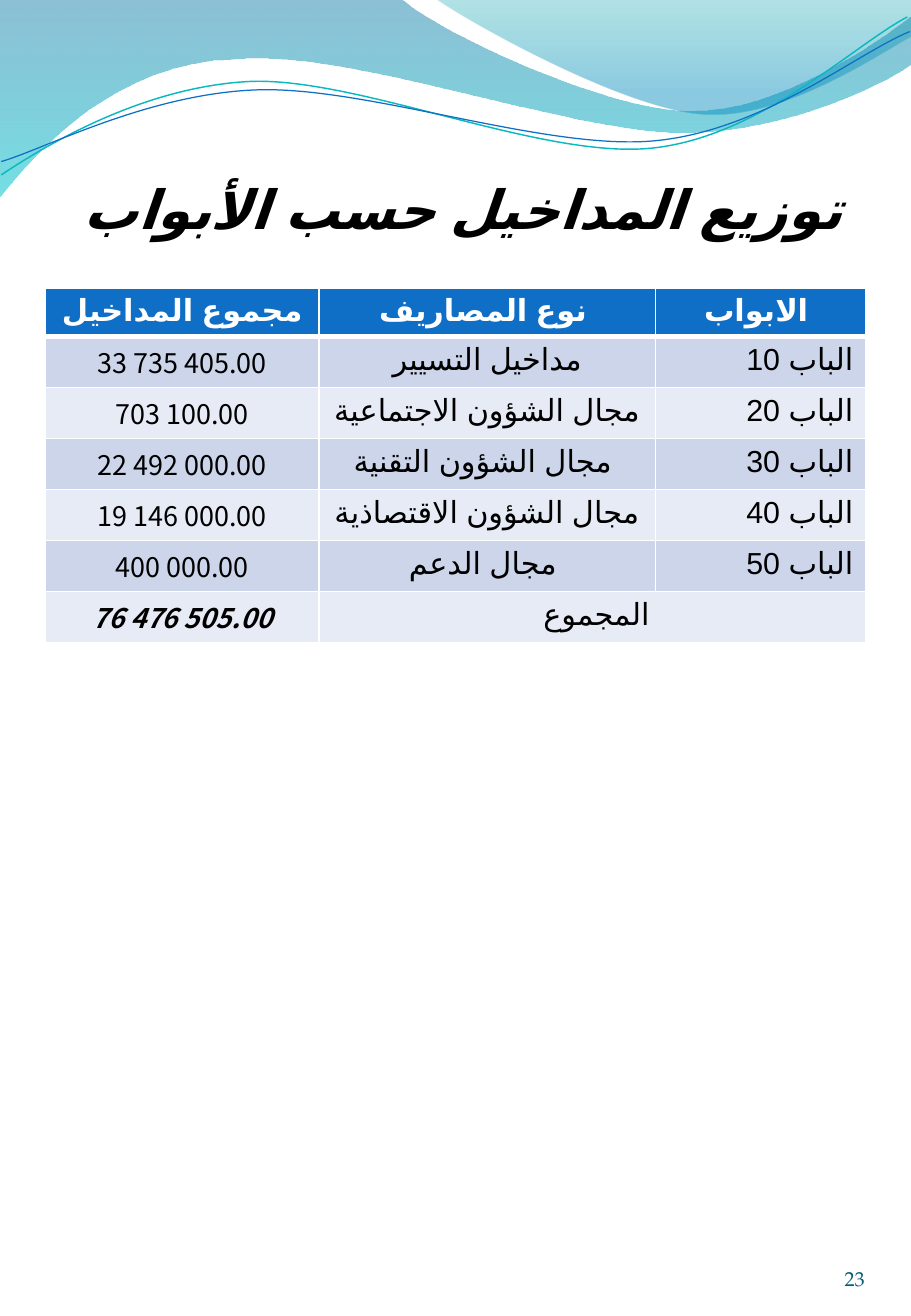
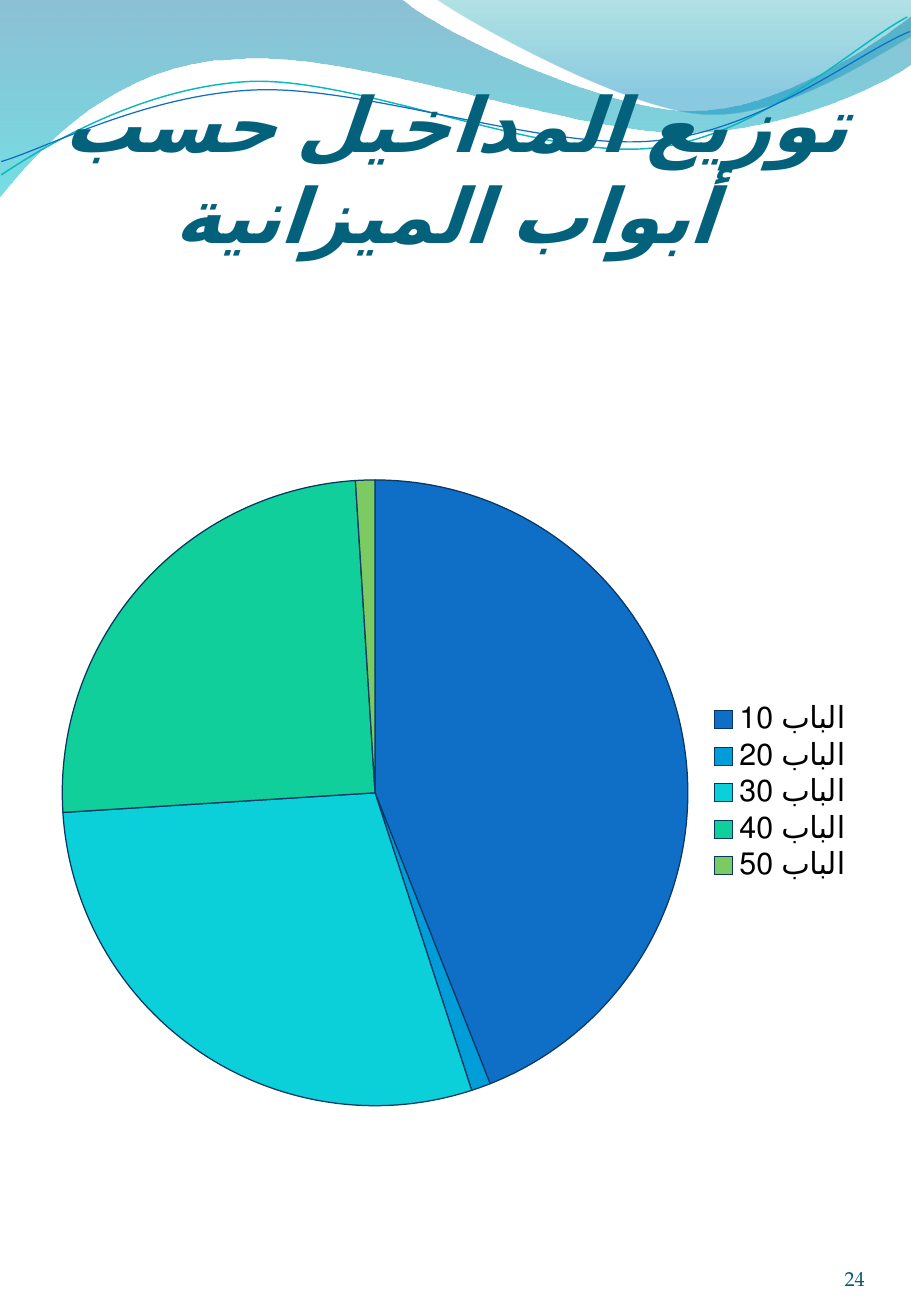
import pptx
import pptx.chart.data
import pptx.dml.color
import pptx.enum.chart
import pptx.enum.text
import pptx.oxml
import pptx.oxml.ns
import pptx.util

W, H = 7.5, 10.83
MARGIN, CONTENT = W * 0.05, W * 0.9
COLORS = {
    "white": "FFFFFF", "black": "000000", "title": "04617B", "number": "045D75",
    "header": "0F6FC6", "band_dark": "CCD5EA", "band_light": "E7EBF5",
    "wave_top": "0074A1", "wave_low": "00C6CF", "crest_top": "00A1A9",
    "crest_low": "008BBF", "teal_line": "0AB8BF", "blue_line": "0F6FC6",
    "pie_line": "073763",
}
PIE_COLORS = ["0F6FC6", "009DD9", "0BD0D9", "10CF9B", "7CCA62"]
BODY, HEADING, FIGURES, ARABIC = "TeX Gyre Pagella", "Calibri", "Noto Sans CJK TC", "Arial"
NS = pptx.oxml.ns.nsdecls("a")
PP = pptx.enum.text.PP_ALIGN
BOTTOM = pptx.enum.text.MSO_ANCHOR.BOTTOM
Inches, Pt = pptx.util.Inches, pptx.util.Pt
rgb = pptx.dml.color.RGBColor.from_string


def write(tf, text, size, font, color, align, bold=False, italic=False, rtl=False):
    p = tf.paragraphs[0]
    p.alignment = align
    if rtl:
        p._p.get_or_add_pPr().set("rtl", "1")
    r = p.add_run()
    r.text = text
    r.font.size, r.font.name = Pt(size), font
    r.font.bold, r.font.italic = bold, italic
    r.font.color.rgb = rgb(COLORS[color])
    if not text.isascii():
        rPr = r._r.get_or_add_rPr()
        rPr.set("lang", "ar-MA")
        rPr.append(pptx.oxml.parse_xml(f'<a:cs {NS} typeface="{ARABIC}"/>'))


def outline(shapes, start, segments, close):
    """Draw a freeform; a segment is one point (line) or three (cubic curve)."""
    ends = [(Inches(x), Inches(y)) for x, y in [start] + [seg[-1] for seg in segments]]
    builder = shapes.build_freeform(*ends[0])
    builder.add_line_segments(ends[1:], close=close)
    sp = builder.convert_to_shape()
    sp.shadow.inherit = False
    left, top = builder.shape_offset_x, builder.shape_offset_y
    for line, segment in zip(sp.element.xpath(".//a:lnTo"), segments):
        if len(segment) == 3:
            points = "".join(f'<a:pt x="{Inches(x) - left}" y="{Inches(y) - top}"/>'
                             for x, y in segment)
            line.getparent().replace(line, pptx.oxml.parse_xml(
                f"<a:cubicBezTo {NS}>{points}</a:cubicBezTo>"))
    return sp


prs = pptx.Presentation()
prs.slide_width, prs.slide_height = Inches(W), Inches(H)
layout = prs.slide_layouts[5]

# Slides with their shared title and page number
slides = []
for number, title, top, height, size, color, rtl in [
    (23, "توزيع المداخيل حسب الأبواب ", 1.28, 0.7, 32, "black", True),
    (24, "توزيع المداخيل حسب أبواب الميزانية ", 1.35, 0.78, 45, "title", False),
]:
    s = prs.slides.add_slide(layout)
    slides.append(s)
    sp = s.shapes.title
    sp.left, sp.top = Inches(MARGIN), Inches(top)
    sp.width, sp.height = Inches(CONTENT), Inches(height)
    tf = sp.text_frame
    tf.margin_left = tf.margin_right = tf.margin_bottom = 0
    tf.margin_top = Inches(0.05)
    tf.word_wrap, tf.vertical_anchor = True, BOTTOM
    tf.auto_size = pptx.enum.text.MSO_AUTO_SIZE.NONE
    write(tf, title, size, HEADING, color, PP.CENTER, True, True, rtl)

    sp = s.shapes.add_textbox(Inches(6.5), Inches(10.04), Inches(0.62), Inches(0.58))
    tf = sp.text_frame
    tf.margin_left = tf.margin_right = tf.margin_top = tf.margin_bottom = 0
    tf.word_wrap, tf.vertical_anchor = True, BOTTOM
    write(tf, str(number), 12, BODY, "number", PP.RIGHT)

# Waves, moved to the layout so that every slide shows them
shapes = slides[0].shapes
waves = []
for start, segments, stops in [
    ((0, -0.01), [
        [(3.3, -0.01)],
        [(3.57, 0.24), (4.98, 0.91), (5.69, 0.91)],
        [(6.4, 0.91), (7.19, 0.37), (7.5, 0.13)],
        [(7.51, 0.52)],
        [(7.38, 0.63), (6.52, 1.09), (5.59, 1.09)],
        [(4.66, 1.08), (2.86, 0.4), (1.93, 0.49)],
        [(0.97, 0.51), (0.34, 1.2), (-0.01, 1.63)],
    ], [(0, "wave_top", 45), (1, "wave_low", 55)]),
    ((3.59, -0.01), [
        [(3.82, 0.16), (5.11, 0.89), (5.77, 0.94)],
        [(6.42, 1), (7.21, 0.46), (7.5, 0.3)],
        [(7.5, 0)],
    ], [(0, "crest_top", 30), (0.8, "crest_low", 45)]),
]:
    sp = outline(shapes, start, segments, True)
    sp.line.fill.background()
    sp.fill.gradient()
    sp.fill.gradient_angle = 270
    for stop, (position, color, _) in zip(sp.fill.gradient_stops, stops):
        stop.position = position
        stop.color.rgb = rgb(COLORS[color])
    for clr, (_, _, opacity) in zip(sp.element.xpath(".//a:gs/a:srgbClr"), stops):
        clr.append(pptx.oxml.parse_xml(f'<a:alpha {NS} val="{opacity * 1000}"/>'))
    waves.append(sp)

for start, segments, color, width in [
    ((0.01, 1.44), [
        [(0.37, 1.2), (1.18, 0.71), (2.07, 0.67)],
        [(2.96, 0.64), (4.46, 1.31), (5.36, 1.22)],
        [(6.26, 1.13), (7.03, 0.37), (7.47, 0.14)],
    ], "teal_line", 0.85),
    ((0.01, 1.33), [
        [(0.36, 1.23), (1.22, 0.77), (2.12, 0.74)],
        [(3.02, 0.71), (4.49, 1.24), (5.38, 1.16)],
        [(6.28, 1.08), (7.05, 0.44), (7.49, 0.26)],
    ], "blue_line", 0.75),
]:
    sp = outline(shapes, start, segments, False)
    sp.fill.background()
    sp.line.color.rgb = rgb(COLORS[color])
    sp.line.width = Pt(width)
    waves.append(sp)

for i, sp in enumerate(waves):
    sp.element.nvSpPr.cNvPr.set("id", str(20 + i))
    layout.shapes.element.insert(2 + i, sp.element)

# Revenue table
header = ["مجموع المداخيل ", "نوع المصاريف ", "الابواب "]
chapters = [
    ("33 735 405.00", "مداخيل التسيير", "الباب 10"),
    ("703 100.00", "مجال الشؤون الاجتماعية ", "الباب 20"),
    ("22 492 000.00", "مجال الشؤون التقنية ", "الباب 30"),
    ("19 146 000.00", "مجال الشؤون الاقتصاذية ", "الباب 40"),
    ("400 000.00", "مجال الدعم ", "الباب 50"),
]
total = ("76 476 505.00", "المجموع ", "")
rows = [header, *chapters, total]
last = len(rows) - 1
table = shapes.add_table(len(rows), 3, Inches(MARGIN), Inches(2.37),
                         Inches(CONTENT), Inches(2.91)).table
for column, width in zip(table.columns, (2.25, 2.77, 1.73)):
    column.width = Inches(width)
for i, row in enumerate(table.rows):
    row.height = Inches(0.42 if i else 0.39)
table.cell(last, 1).merge(table.cell(last, 2))

for i, row in enumerate(rows):
    band = "header" if i == 0 else "band_dark" if i % 2 else "band_light"
    for j, text in enumerate(row):
        cell = table.cell(i, j)
        tcPr = cell._tc.get_or_add_tcPr()
        for side in "LRTB":
            width = 3 if i == 0 and side == "B" else 1
            tcPr.append(pptx.oxml.parse_xml(
                f'<a:ln{side} {NS} w="{Pt(width)}"><a:solidFill>'
                f'<a:srgbClr val="{COLORS["white"]}"/></a:solidFill></a:ln{side}>'))
        cell.fill.solid()
        cell.fill.fore_color.rgb = rgb(COLORS[band])
        if not text:
            continue
        if i == 0:
            write(cell.text_frame, text, 18, BODY, "white", PP.CENTER, True, rtl=j == 0)
        elif j == 0:
            write(cell.text_frame, text, 16, FIGURES, "black", PP.CENTER,
                  i == last, i == last)
        else:
            write(cell.text_frame, text, 18, BODY, "black",
                  PP.RIGHT if j == 2 else PP.CENTER, rtl=j == 2 or i == last)

# Pie of each chapter's percentage of the total
data = pptx.chart.data.CategoryChartData()
data.categories = [chapter for _, _, chapter in chapters]
data.add_series("Series 1", [44, 1, 29, 25, 1])
chart = slides[1].shapes.add_chart(
    pptx.enum.chart.XL_CHART_TYPE.PIE, Inches(MARGIN), Inches(3.06),
    Inches(CONTENT), Inches(6.93), data).chart
chart.has_title = False
chart.font.size, chart.font.name = Pt(18), BODY
chart.font.color.rgb = rgb(COLORS["black"])
chart.has_legend = True
chart.legend.position = pptx.enum.chart.XL_LEGEND_POSITION.RIGHT
chart.legend.include_in_layout = False
plot = chart.plots[0]
plot.vary_by_categories = True
for i, color in enumerate(PIE_COLORS):
    fmt = plot.series[0].points[i].format
    fmt.fill.solid()
    fmt.fill.fore_color.rgb = rgb(color)
    fmt.line.color.rgb = rgb(COLORS["pie_line"])
    fmt.line.width = Pt(0.75)

prs.save("out.pptx")
